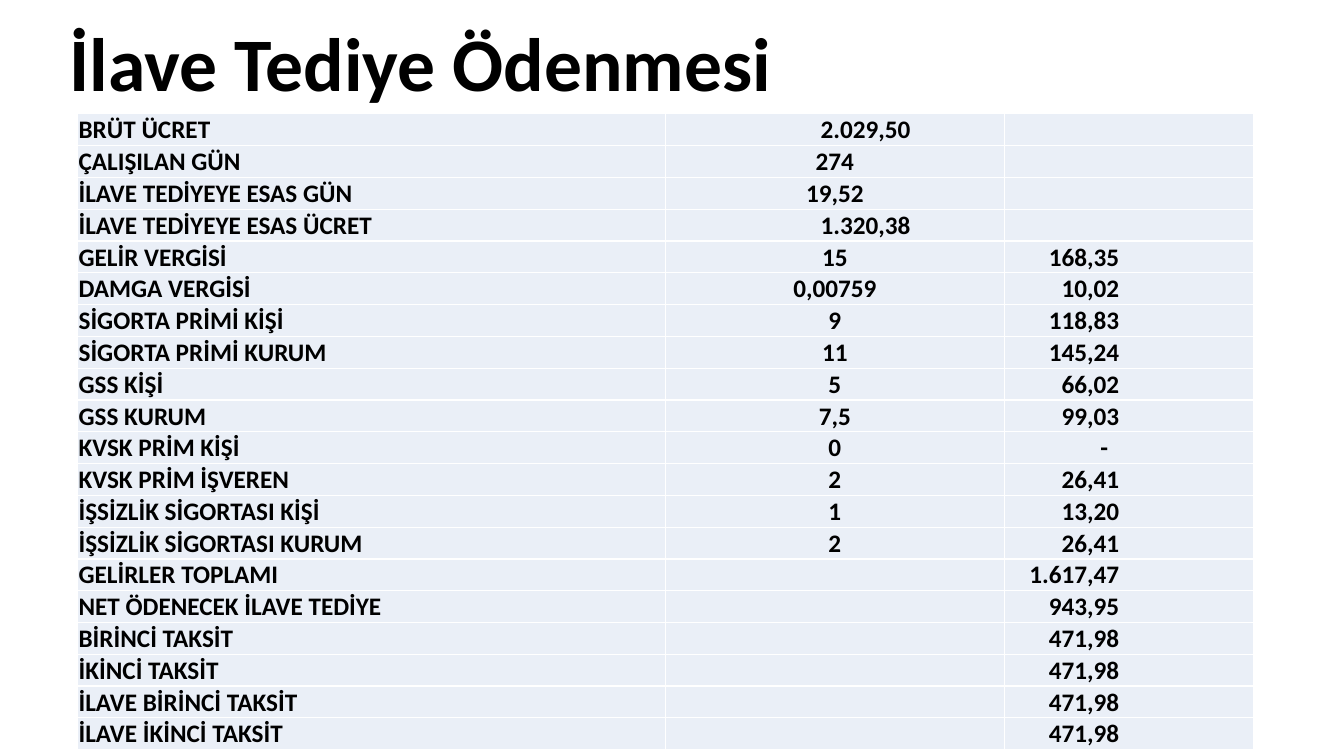
from pptx import Presentation
from pptx.dml.color import RGBColor
from pptx.enum.text import MSO_ANCHOR as Anchor, PP_ALIGN as Align
from pptx.oxml import parse_xml
from pptx.oxml.ns import nsdecls
from pptx.util import Inches, Pt

BLACK = RGBColor(0x00, 0x00, 0x00)
WHITE = RGBColor(0xFF, 0xFF, 0xFF)
PALE = RGBColor(0xEA, 0xEF, 0xF7)

WIDTHS = (5.83, 3.36, 2.47)
ALIGNS = (Align.LEFT, Align.CENTER, Align.RIGHT)
PAD = 0.01      # cell inset
SHIFT = 0.62    # left inset that moves money amounts off centre
INDENT = 1.33   # right inset of the amounts column

ROWS = [
    ("BRÜT ÜCRET", "2.029,50", ""),
    ("ÇALIŞILAN GÜN", "274", ""),
    ("İLAVE TEDİYEYE ESAS GÜN", "19,52", ""),
    ("İLAVE TEDİYEYE ESAS ÜCRET", "1.320,38", ""),
    ("GELİR VERGİSİ", "15", "168,35"),
    ("DAMGA VERGİSİ", "0,00759", "10,02"),
    ("SİGORTA PRİMİ KİŞİ", "9", "118,83"),
    ("SİGORTA PRİMİ KURUM", "11", "145,24"),
    ("GSS KİŞİ", "5", "66,02"),
    ("GSS KURUM", "7,5", "99,03"),
    ("KVSK PRİM KİŞİ", "0", "-"),
    ("KVSK PRİM İŞVEREN", "2", "26,41"),
    ("İŞSİZLİK SİGORTASI KİŞİ", "1", "13,20"),
    ("İŞSİZLİK SİGORTASI KURUM", "2", "26,41"),
    ("GELİRLER TOPLAMI", "", "1.617,47"),
    ("NET ÖDENECEK İLAVE TEDİYE", "", "943,95"),
    ("BİRİNCİ TAKSİT", "", "471,98"),
    ("İKİNCİ TAKSİT", "", "471,98"),
    ("İLAVE BİRİNCİ TAKSİT", "", "471,98"),
    ("İLAVE İKİNCİ TAKSİT", "", "471,98"),
]


def write(frame, text, size=18, align=Align.LEFT, space=None):
    para = frame.paragraphs[0]
    para.alignment = align
    para.line_spacing = space
    para.font.size = Pt(size)
    if text:
        run = para.add_run()
        run.text = text
        font = run.font
        font.name, font.size, font.bold = "Calibri", Pt(size), True
        font.color.rgb = BLACK


def border(cell):
    props = cell._tc.get_or_add_tcPr()
    for spot, side in enumerate("LRTB"):
        props.insert(spot, parse_xml(
            f'<a:ln{side} {nsdecls("a")} w="{Pt(1)}"><a:solidFill>'
            f'<a:srgbClr val="{WHITE}"/></a:solidFill></a:ln{side}>'))


def fill_cell(cell, text, col):
    left = right = PAD
    if col == 1 and "." in text:
        left = SHIFT
    if col == 2:
        right = INDENT + (0.11 if text == "-" else 0)
    cell.margin_left, cell.margin_right = Inches(left), Inches(right)
    cell.margin_top, cell.margin_bottom = Inches(PAD), 0
    cell.vertical_anchor = Anchor.BOTTOM
    cell.fill.solid()
    cell.fill.fore_color.rgb = PALE
    border(cell)
    write(cell.text_frame, text, align=ALIGNS[col])


def add_title(slide, x, y, w, h):
    box = slide.shapes.add_textbox(Inches(x), Inches(y), Inches(w), Inches(h))
    frame = box.text_frame
    frame.word_wrap = True
    frame.vertical_anchor = Anchor.BOTTOM
    write(frame, "İlave Tediye Ödenmesi", size=54, space=0.7)


def add_grid(slide, x, y, w, h):
    table = slide.shapes.add_table(
        len(ROWS), len(WIDTHS), Inches(x), Inches(y), Inches(w), Inches(h)).table
    table.first_row = table.horz_banding = False
    for col, width in zip(table.columns, WIDTHS):
        col.width = Inches(width)
    for r, row in enumerate(ROWS):
        for c, text in enumerate(row):
            fill_cell(table.cell(r, c), text, c)


def main():
    deck = Presentation()
    deck.slide_width, deck.slide_height = Inches(13.33), Inches(7.5)
    slide = deck.slides.add_slide(deck.slide_layouts[6])
    add_grid(slide, 0.77, 1.13, sum(WIDTHS), 6.21)
    add_title(slide, 0.59, 0.33, 11.08, 0.75)
    deck.save("out.pptx")


if __name__ == "__main__":
    main()
